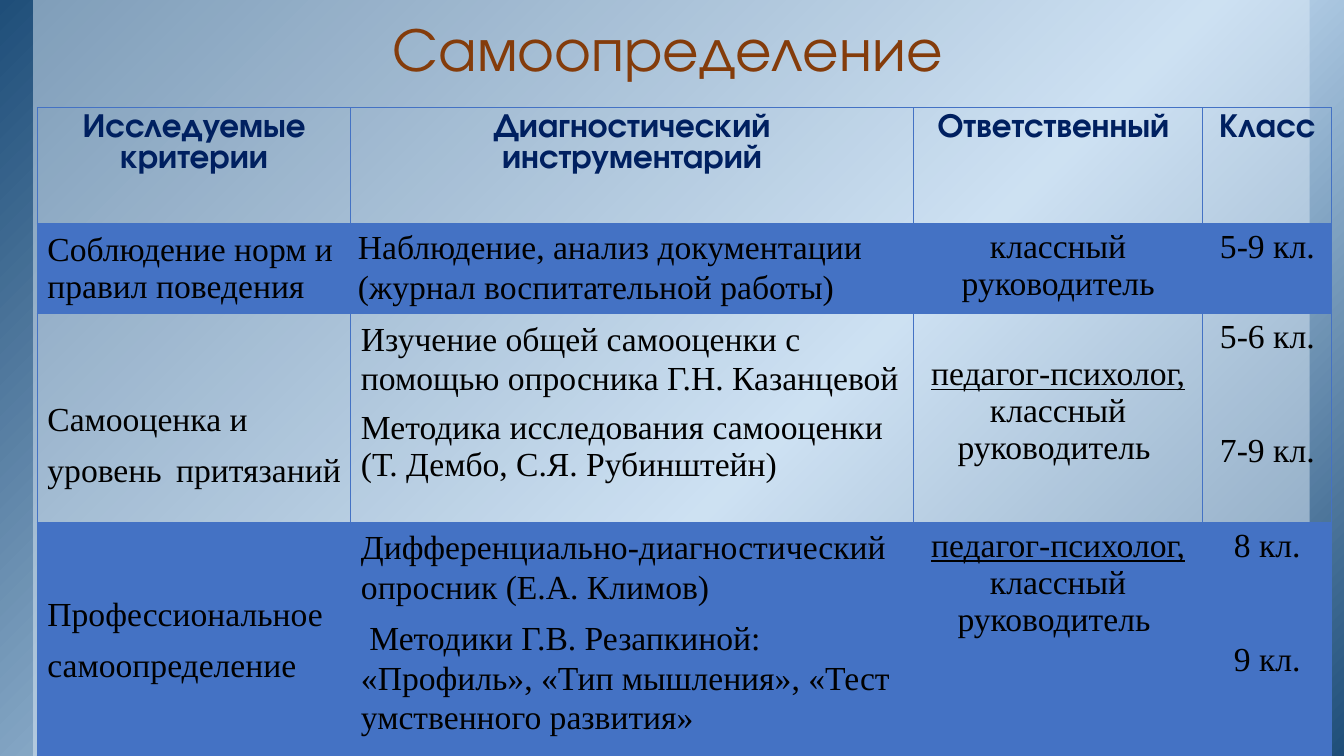
from dataclasses import dataclass

from lxml import etree
from pptx import Presentation
from pptx.dml.color import RGBColor
from pptx.enum.shapes import MSO_SHAPE
from pptx.enum.text import MSO_ANCHOR as ANCHOR, MSO_AUTO_SIZE, PP_ALIGN as ALIGN
from pptx.oxml import parse_xml
from pptx.oxml.ns import nsdecls, qn
from pptx.util import Pt

PX = 9144  # 100 px to the inch
SLIDE_W, SLIDE_H = 1333, 750
COLORS = {
    "navy": "1F4E79", "sky": "BDD7EE", "panel": "DEEBF7", "title": "843C0B",
    "head": "002060", "text": "000000", "grid": "4472C4",
}
HEAD_FONT, BODY_FONT = "TeX Gyre Adventor", "Times New Roman"
COLS = [311, 558, 287, 128]
ROWS = [115, 89, 207, 232]
LOOSE = {"line": 1.07, "after": 8}


@dataclass
class Para:
    text: str
    align: ALIGN = ALIGN.CENTER
    line: float = 1.0
    before: int = 0
    after: int = 0
    underlined: str = ""


@dataclass
class Cell:
    paras: list
    anchor: ANCHOR = ANCHOR.TOP
    margins: tuple = (10, 5, 10, 5)


def criterion(*lines, top=5):
    paras = [Para(s, ALIGN.JUSTIFY, **LOOSE) for s in lines]
    return Cell(paras, ANCHOR.MIDDLE, (10, top, 10, 5))


def staff(top=5):
    para = Para(" классный руководитель ", underlined="педагог-психолог,")
    return Cell([para], margins=(10, top, 10, 5))


def grades(first, second):
    return Cell([Para(first), Para(second, before=55)])


HEADS = ["Исследуемые критерии", "Диагностический инструментарий", "Ответственный ", "Класс"]
BODY = [
    [
        Cell([Para("Соблюдение норм и правил поведения", ALIGN.LEFT)], ANCHOR.MIDDLE),
        Cell([Para("Наблюдение, анализ документации (журнал воспитательной работы)",
                   ALIGN.LEFT, **LOOSE)], margins=(7, 3, 0, 0)),
        Cell([Para("классный руководитель")]),
        Cell([Para("5-9 кл.")]),
    ],
    [
        criterion("Самооценка и ", "уровень притязаний ", top=57),
        Cell([
            Para("Изучение общей самооценки с помощью опросника Г.Н. Казанцевой",
                 ALIGN.LEFT, **LOOSE),
            Para("Методика исследования самооценки (Т. Дембо, С.Я. Рубинштейн)", ALIGN.LEFT),
        ]),
        staff(top=42),
        grades("5-6 кл.", "7-9 кл."),
    ],
    [
        criterion("Профессиональное ", "самоопределение "),
        Cell([
            Para("Дифференциально-диагностический опросник (Е.А. Климов)", ALIGN.LEFT, **LOOSE),
            Para(" Методики Г.В. Резапкиной: «Профиль», «Тип мышления», «Тест умственного развития»",
                 ALIGN.LEFT, **LOOSE),
        ]),
        staff(),
        grades("8 кл.", "9 кл."),
    ],
]


def px(*values):
    return [v * PX for v in values]


def rgb(name):
    return RGBColor.from_string(COLORS[name])


def set_font(font, name, size, color, bold=False):
    font.name, font.size, font.bold = name, Pt(size), bold
    font.color.rgb = rgb(color)


def fill_translucent(fill, color, percent):
    fill.solid()
    fill.fore_color.rgb = rgb(color)
    srgb = next(fill._xPr.iter(qn("a:srgbClr")))
    etree.SubElement(srgb, qn("a:alpha")).set("val", str(percent * 1000))


def add_rect(slide, box):
    sp = slide.shapes.add_shape(MSO_SHAPE.RECTANGLE, *px(*box))
    sp.shadow.inherit = False
    sp.line.fill.background()
    return sp


def add_backdrop(slide, box):
    x, y, w, h = box
    base = add_rect(slide, box)
    base.fill.gradient()
    base.fill.gradient_angle = 315
    stops = base.fill._xPr.find(qn("a:gradFill")).find(qn("a:gsLst"))
    for stop in list(stops):
        stops.remove(stop)
    for pos, color in ((0, "navy"), (58, "sky"), (100, "navy")):
        stops.append(parse_xml(
            f'<a:gs {nsdecls("a")} pos="{pos * 1000}"><a:srgbClr val="{COLORS[color]}"/></a:gs>'))
    panel = add_rect(slide, (x + 33, y, w - 67, h))
    fill_translucent(panel.fill, "panel", 50)


def place_title(slide, box, text):
    title = slide.shapes.title
    slide.shapes._spTree.append(title._element)  # above the backdrop
    title.left, title.top, title.width, title.height = px(*box)
    tf = title.text_frame
    tf.text = text
    tf.word_wrap, tf.auto_size = True, MSO_AUTO_SIZE.NONE
    tf.vertical_anchor = ANCHOR.BOTTOM
    tf.margin_left, tf.margin_top, tf.margin_right, tf.margin_bottom = px(13, 7, 13, 7)
    p = tf.paragraphs[0]
    p.alignment, p.line_spacing = ALIGN.CENTER, 0.85
    set_font(p.font, HEAD_FONT, 44, "title")


def add_borders(cell, row):
    """Draw the grid, with a double line under the heading row."""
    widths = {"L": 1, "R": 1, "T": 2 if row == 1 else 1, "B": 2 if row == 0 else 1}
    tcPr = cell._tc.get_or_add_tcPr()
    for side, width in widths.items():
        tcPr.append(parse_xml(
            f'<a:ln{side} {nsdecls("a")} w="{Pt(width)}"><a:solidFill>'
            f'<a:srgbClr val="{COLORS["grid"]}"/></a:solidFill></a:ln{side}>'))


def fill_cell(cell, content, row):
    add_borders(cell, row)
    if row % 2:
        fill_translucent(cell.fill, "grid", 20)
    else:
        cell.fill.background()
    cell.vertical_anchor = content.anchor
    cell.margin_left, cell.margin_top, cell.margin_right, cell.margin_bottom = px(*content.margins)
    tf = cell.text_frame
    for i, para in enumerate(content.paras):
        p = tf.add_paragraph() if i else tf.paragraphs[0]
        p.alignment, p.line_spacing = para.align, para.line
        p.space_before, p.space_after = Pt(para.before), Pt(para.after)
        if row == 0:
            set_font(p.font, HEAD_FONT, 24, "head", bold=True)
        else:
            set_font(p.font, BODY_FONT, 24, "text")
        if para.underlined:
            r = p.add_run()
            r.text, r.font.underline = para.underlined, True
        p.add_run().text = para.text


def add_criteria_table(slide, left, top):
    rows = [[Cell([Para(s)]) for s in HEADS]] + BODY
    frame = slide.shapes.add_table(len(ROWS), len(COLS), *px(left, top, sum(COLS), sum(ROWS)))
    table = frame.table
    table.first_row = table.horz_banding = False
    for col, width in zip(table.columns, COLS):
        col.width = width * PX
    for r, height in enumerate(ROWS):
        table.rows[r].height = height * PX
        for c, content in enumerate(rows[r]):
            fill_cell(table.cell(r, c), content, r)


def main():
    prs = Presentation()
    prs.slide_width, prs.slide_height = px(SLIDE_W, SLIDE_H)
    slide = prs.slides.add_slide(prs.slide_layouts[5])
    add_backdrop(slide, (0, 0, SLIDE_W, SLIDE_H))
    place_title(slide, (107, 13, 1111, 77), "Самоопределение")
    add_criteria_table(slide, 37, 107)
    prs.save("out.pptx")


if __name__ == "__main__":
    main()
